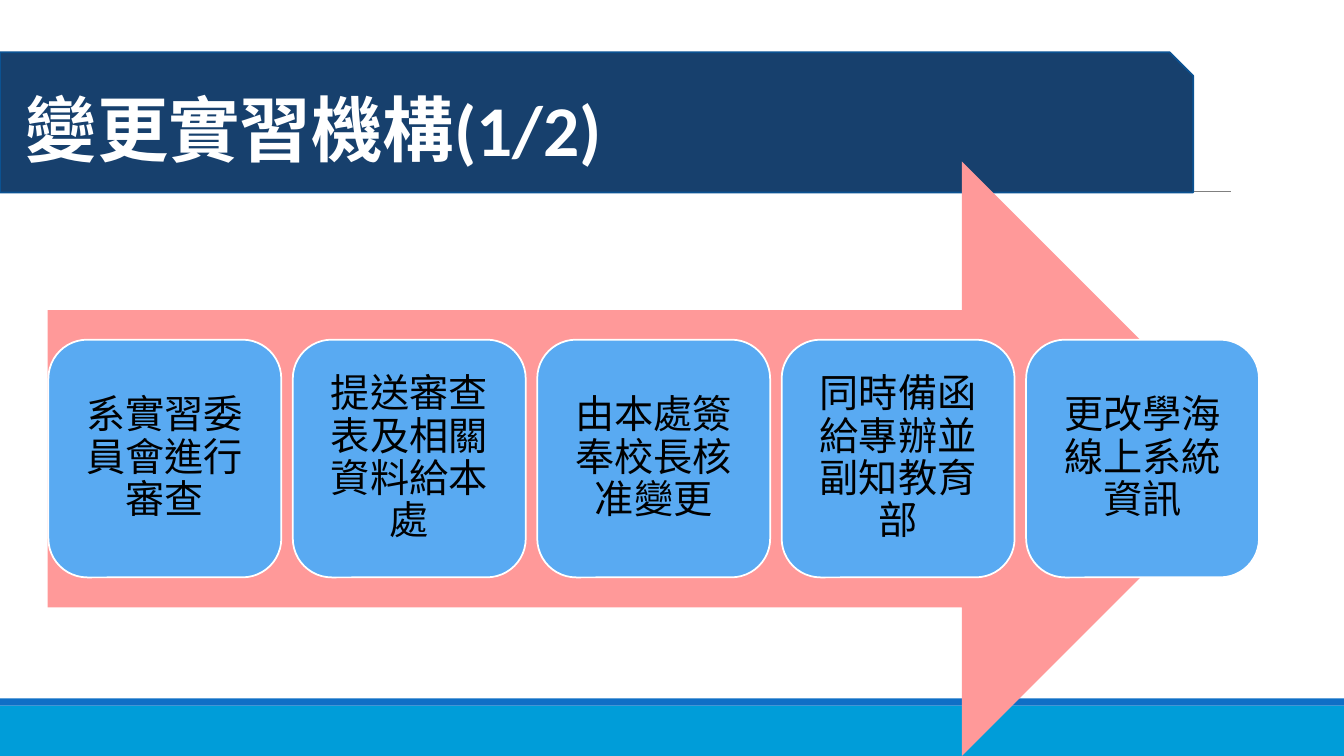
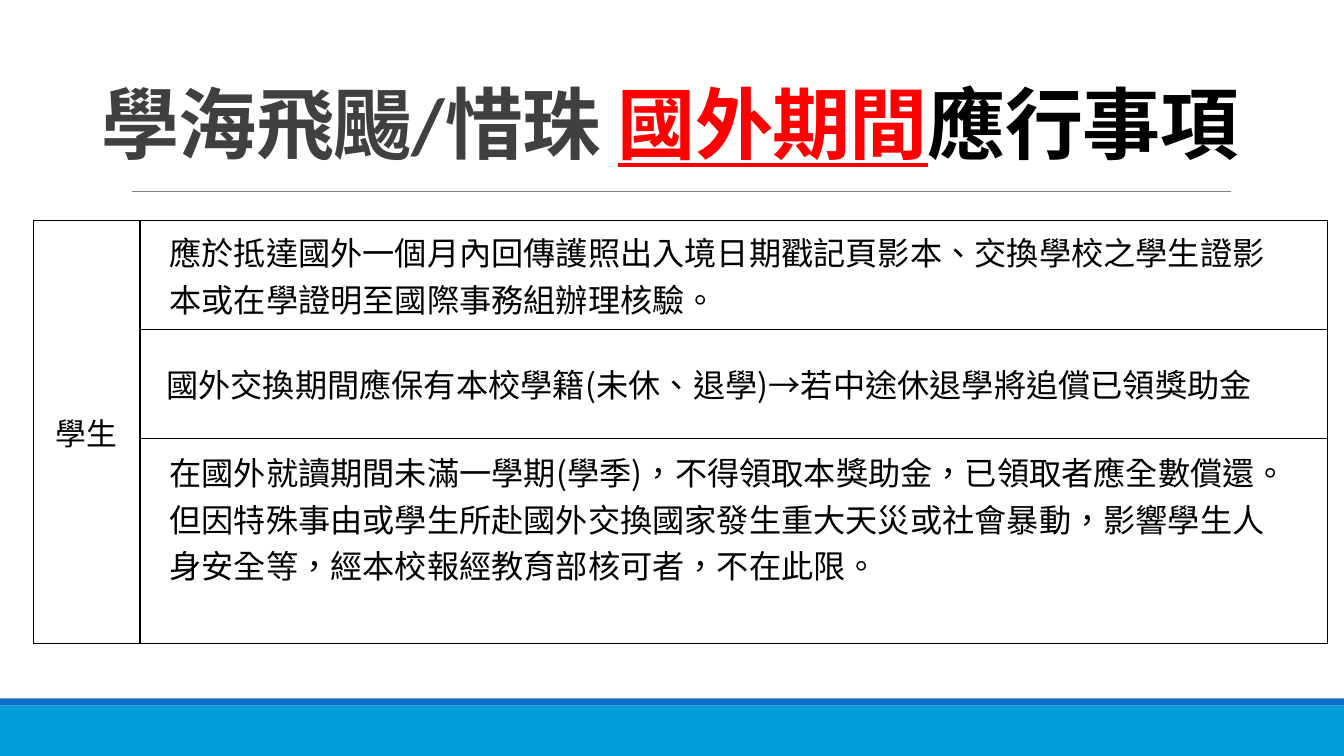
from lxml import etree
from pptx import Presentation
from pptx.dml.color import RGBColor
from pptx.enum.shapes import MSO_CONNECTOR, MSO_SHAPE
from pptx.enum.text import MSO_ANCHOR, PP_ALIGN
from pptx.oxml.ns import qn
from pptx.util import Cm, Pt

# Enum members
RECTANGLE = MSO_SHAPE.RECTANGLE
SNIPPED = MSO_SHAPE.SNIP_1_RECTANGLE
ARROW = MSO_SHAPE.RIGHT_ARROW
ROUNDED = MSO_SHAPE.ROUNDED_RECTANGLE
STRAIGHT = MSO_CONNECTOR.STRAIGHT
MIDDLE, BOTTOM = MSO_ANCHOR.MIDDLE, MSO_ANCHOR.BOTTOM
LEFT, CENTER = PP_ALIGN.LEFT, PP_ALIGN.CENTER

# Colours
WHITE = RGBColor(0xFF, 0xFF, 0xFF)
BLACK = RGBColor(0x00, 0x00, 0x00)
RED = RGBColor(0xFF, 0x00, 0x00)
DARK_GRAY = RGBColor(0x40, 0x40, 0x40)
RULE_GRAY = RGBColor(0x80, 0x80, 0x80)
BAND_BLUE = RGBColor(0x00, 0x9D, 0xD9)
STRIPE_BLUE = RGBColor(0x0F, 0x6F, 0xC6)
NAVY = RGBColor(0x17, 0x40, 0x6D)
NAVY_EDGE = RGBColor(0x0B, 0x52, 0x92)
PINK = RGBColor(0xFF, 0x99, 0x99)
STEP_BLUE = RGBColor(0x59, 0xAA, 0xF2)

# Shared sizes and text formats
WIDTH, HEIGHT = Cm(33.87), Cm(19.05)
HAN_FONT = "Noto Sans CJK SC"
BANNER_FONT = {"name": "Calibri", "size": Pt(51), "bold": True}
TITLE_FONT = {"name": "Calibri", "size": Pt(55.8), "bold": True}
STEP_FONT = {"name": HAN_FONT, "size": Pt(28)}
LABEL_FONT = {"name": HAN_FONT, "size": Pt(22)}
RULE_FONT = {"name": HAN_FONT, "size": Pt(23)}

# Content
STEPS = [
    "系實習委員會進行審查",
    "提送審查表及相關資料給本處",
    "由本處簽奉校長核准變更",
    "同時備函給專辦並副知教育部",
    "更改學海線上系統資訊",
]
TITLE_SPANS = [
    ("學海飛颺/惜珠 ", DARK_GRAY, False),
    ("國外期間", RED, True),
    ("應行事項", BLACK, False),
]
# Each row: height, left margin, top margin, bottom margin (cm), lines
RULES = [
    (2.74, 0.74, 0.13, 0.13, [
        "應於抵達國外一個月內回傳護照出入境日期戳記頁影本、交換學校之學生證影",
        "本或在學證明至國際事務組辦理核驗。",
    ]),
    (2.74, 0.66, 0, 0, [
        "國外交換期間應保有本校學籍(未休、退學)→若中途休退學將追償已領獎助金",
    ]),
    (5.18, 0.74, 0.13, 1.28, [
        "在國外就讀期間未滿一學期(學季)，不得領取本獎助金，已領取者應全數償還。",
        "但因特殊事由或學生所赴國外交換國家發生重大天災或社會暴動，影響學生人",
        "身安全等，經本校報經教育部核可者，不在此限。",
    ]),
]


def apply(target, values):
    for name, value in values.items():
        setattr(target, name, value)


def add_span(para, text, color, font, spacing=None):
    span = para.add_run()
    span.text = text
    apply(span.font, font)
    span.font.color.rgb = color
    # East Asian face, language and letter spacing
    properties = span.font._element
    properties.set("lang", "zh-TW")
    if spacing is not None:
        properties.set("spc", str(spacing))
    etree.SubElement(properties, qn("a:ea"), typeface=HAN_FONT)
    return span


def write_lines(frame, lines, color, font, **para_format):
    for index, line in enumerate(lines):
        para = frame.add_paragraph() if index else frame.paragraphs[0]
        apply(para, para_format)
        add_span(para, line, color, font)


def add_block(page, kind, left, top, width, height, fill, line=None):
    block = page.shapes.add_shape(kind, left, top, width, height)
    block.shadow.inherit = False
    block.fill.solid()
    block.fill.fore_color.rgb = fill
    if line is None:
        block.line.fill.background()
    else:
        block.line.color.rgb = line
        block.line.width = Pt(1.25)
    return block


def add_page(deck):
    """Blank page with the footer bands and the rule under the title."""
    page = deck.slides.add_slide(deck.slide_layouts[6])
    add_block(page, RECTANGLE, 0, Cm(17.78), WIDTH, Cm(1.27), BAND_BLUE)
    add_block(page, RECTANGLE, 0, Cm(17.6), WIDTH, Cm(0.18), STRIPE_BLUE)
    rule = page.shapes.add_connector(
        STRAIGHT, Cm(3.33), Cm(4.83), Cm(31.01), Cm(4.83))
    rule.line.color.rgb = RULE_GRAY
    rule.line.width = Pt(0.5)
    etree.SubElement(rule._element.spPr, qn("a:effectLst"))
    return page


def add_banner(page, text):
    banner = add_block(page, SNIPPED, 0, Cm(1.32), Cm(30.07), Cm(3.53),
                       NAVY, NAVY_EDGE)
    apply(banner.text_frame, {"vertical_anchor": MIDDLE, "word_wrap": True,
                              "margin_left": Cm(0.65)})
    write_lines(banner.text_frame, [text], WHITE, BANNER_FONT, alignment=LEFT)


def add_process(page, steps):
    add_block(page, ARROW, Cm(1.2), Cm(4.07), Cm(30.53), Cm(14.98), PINK)
    inset = Cm(0.3)
    for index, text in enumerate(steps):
        step = add_block(page, ROUNDED, Cm(1.22 + 6.16 * index), Cm(8.56),
                         Cm(5.87), Cm(5.99), STEP_BLUE, WHITE)
        apply(step.text_frame, {
            "vertical_anchor": MIDDLE, "word_wrap": True,
            "margin_left": inset, "margin_right": inset,
            "margin_top": inset, "margin_bottom": inset})
        write_lines(step.text_frame, [text], BLACK, STEP_FONT,
                    alignment=CENTER, line_spacing=0.9)


def add_title(page, spans):
    box = page.shapes.add_textbox(Cm(2.01), Cm(0.36), Cm(29.74), Cm(4.04))
    apply(box.text_frame, {"vertical_anchor": BOTTOM, "word_wrap": True})
    para = box.text_frame.paragraphs[0]
    apply(para, {"alignment": CENTER, "line_spacing": 0.85})
    for text, color, underline in spans:
        span = add_span(para, text, color, TITLE_FONT, spacing=-50)
        span.font.underline = underline


def style_cell(cell):
    """Black border on every side, no fill."""
    properties = cell._tc.get_or_add_tcPr()
    for side in ("lnL", "lnR", "lnT", "lnB"):
        border = etree.SubElement(properties, qn(f"a:{side}"), w=str(Pt(1)))
        fill = etree.SubElement(border, qn("a:solidFill"))
        etree.SubElement(fill, qn("a:srgbClr"), val=str(BLACK))
    cell.fill.background()
    cell.vertical_anchor = MIDDLE


def add_rules_table(page, label, rules):
    table = page.shapes.add_table(len(rules), 2, Cm(0.84), Cm(5.56),
                                  Cm(32.61), Cm(10.66)).table
    apply(table, {"first_row": False, "horz_banding": False})
    for column, width in zip(table.columns, (2.69, 29.92)):
        column.width = Cm(width)
    for cell in table.iter_cells():
        style_cell(cell)

    # Label cell spanning all rows
    label_cell = table.cell(0, 0)
    label_cell.merge(table.cell(len(rules) - 1, 0))
    write_lines(label_cell.text_frame, [label], BLACK, LABEL_FONT,
                alignment=CENTER)

    # One rule per row
    for index, (height, left, top, bottom, lines) in enumerate(rules):
        table.rows[index].height = Cm(height)
        cell = table.cell(index, 1)
        apply(cell, {"margin_left": Cm(left), "margin_right": Cm(0.18),
                     "margin_top": Cm(top), "margin_bottom": Cm(bottom)})
        write_lines(cell.text_frame, lines, BLACK, RULE_FONT, alignment=LEFT)


def main():
    deck = Presentation()
    apply(deck, {"slide_width": WIDTH, "slide_height": HEIGHT})

    # Changing the internship organisation
    page = add_page(deck)
    add_banner(page, "變更實習機構(1/2)")
    add_process(page, STEPS)

    # Duties while abroad
    page = add_page(deck)
    add_title(page, TITLE_SPANS)
    add_rules_table(page, "學生", RULES)

    deck.save("out.pptx")


if __name__ == "__main__":
    main()
